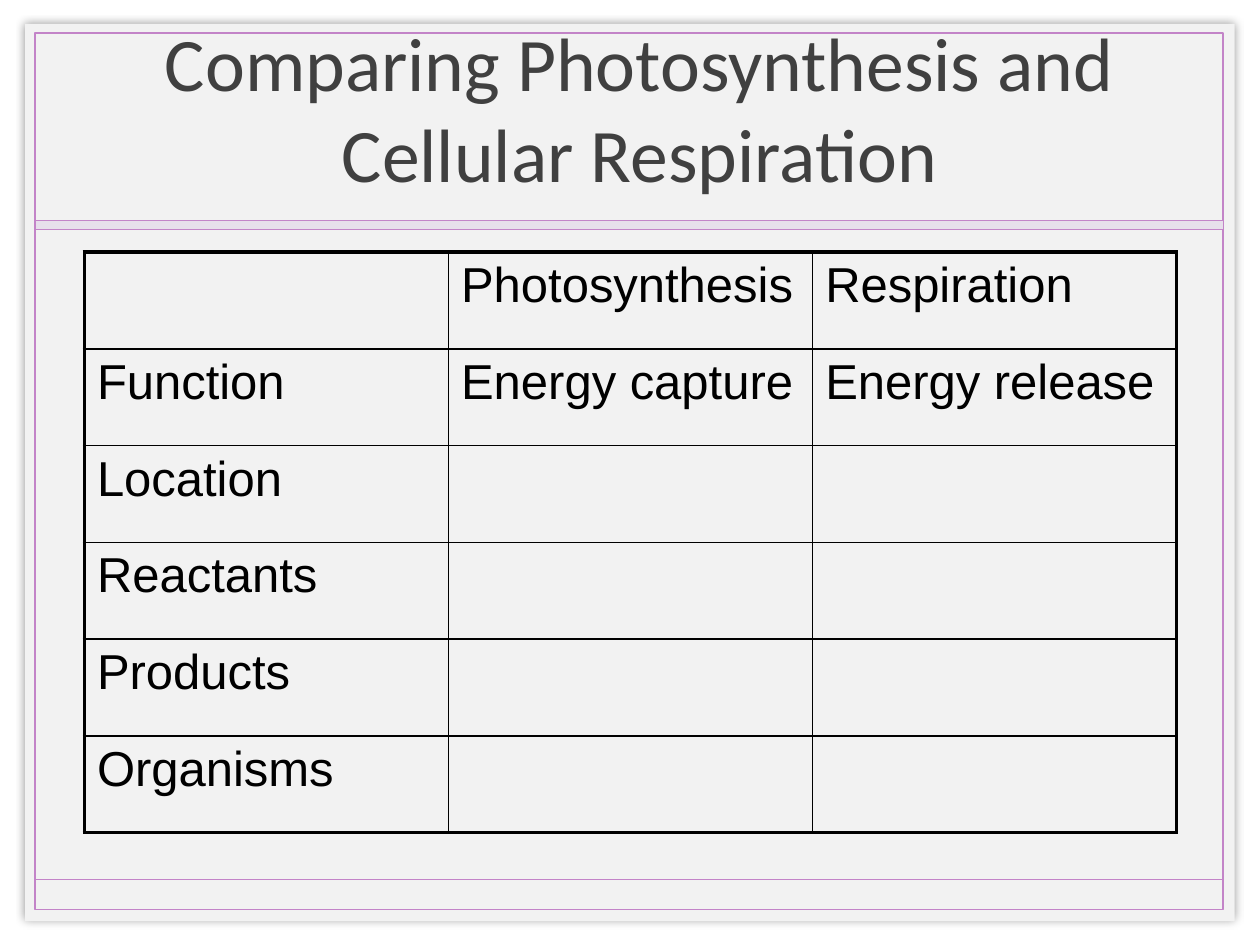
from dataclasses import dataclass
from typing import Any, Optional

import pptx
import pptx.dml.color
import pptx.enum.shapes
import pptx.enum.text
import pptx.oxml
import pptx.oxml.ns
import pptx.util
from lxml import etree

Inches = pptx.util.Inches
Pt = pptx.util.Pt
PINK = "C384C8"
BLACK = "000000"


@dataclass
class Panel:
    left: float
    top: float
    width: float
    height: float
    fill: Optional[str] = None
    line: Optional[str] = None
    weight: float = 1
    glow: bool = False


PANELS = [
    Panel(0.2, 0.19, 9.6, 7.12, fill="F2F2F2", glow=True),
    Panel(0.28, 0.26, 9.43, 6.96, line=PINK),
    Panel(0.28, 1.75, 9.43, 0.07, fill="E7DFEB", line=PINK, weight=0.25),
]
ROWS = [
    ("", "Photosynthesis", "Respiration"),
    ("Function", "Energy capture", "Energy release"),
    ("Location", "", ""),
    ("Reactants", "", ""),
    ("Products", "", ""),
    ("Organisms", "", ""),
]


def color(code: str) -> pptx.dml.color.RGBColor:
    return pptx.dml.color.RGBColor.from_string(code)


def add(parent: Any, tag: str, **attrs: str) -> Any:
    return etree.SubElement(parent, pptx.oxml.ns.qn(tag), attrs)


def draw_panel(slide: Any, panel: Panel) -> None:
    shape = slide.shapes.add_shape(
        pptx.enum.shapes.MSO_SHAPE.RECTANGLE,
        Inches(panel.left), Inches(panel.top),
        Inches(panel.width), Inches(panel.height))
    shape.shadow.inherit = False
    if panel.fill:
        shape.fill.solid()
        shape.fill.fore_color.rgb = color(panel.fill)
    else:
        shape.fill.background()
    if panel.line:
        shape.line.color.rgb = color(panel.line)
        shape.line.width = Pt(panel.weight)
    else:
        shape.line.fill.background()
    if panel.glow:
        effects = shape._element.spPr.find(pptx.oxml.ns.qn("a:effectLst"))
        shade = add(effects, "a:outerShdw", blurRad=str(Pt(5)), dist="0",
                    dir="0", algn="ctr", rotWithShape="0")
        add(add(shade, "a:srgbClr", val=BLACK), "a:alpha", val="40000")


def draw_rule(slide: Any, left: float, right: float, y: float) -> None:
    rule = slide.shapes.add_connector(
        pptx.enum.shapes.MSO_CONNECTOR.STRAIGHT,
        Inches(left), Inches(y), Inches(right), Inches(y))
    rule.line.color.rgb = color(PINK)
    rule.line.width = Pt(1)
    add(rule._element.spPr, "a:effectLst")


def set_edge(cell: Any, side: str, outer: bool) -> None:
    weight = Pt(2.25 if outer else 1)
    edge = add(cell._tc.get_or_add_tcPr(), f"a:ln{side}", w=str(weight))
    add(add(edge, "a:solidFill"), "a:srgbClr", val=BLACK)


def draw_table(slide: Any, rows: list[tuple[str, ...]]) -> None:
    high, wide = len(rows), len(rows[0])
    table = slide.shapes.add_table(
        high, wide, Inches(0.67), Inches(2),
        Inches(8.67), Inches(4.61)).table
    table.first_row = False
    table.horz_banding = False
    for r, row in enumerate(rows):
        for c, text in enumerate(row):
            cell = table.cell(r, c)
            cell.text = text
            font = cell.text_frame.paragraphs[0].font
            font.name = "Arial"
            font.size = Pt(28)
            font.color.rgb = color(BLACK)
            set_edge(cell, "L", c == 0)
            set_edge(cell, "R", c == wide - 1)
            set_edge(cell, "T", r == 0)
            set_edge(cell, "B", r == high - 1)
            cell.fill.background()


def draw_title(slide: Any, text: str) -> None:
    box = slide.shapes.add_textbox(
        Inches(0.35), Inches(0.06), Inches(9.45), Inches(1.57))
    frame = box.text_frame
    frame.word_wrap = True
    frame.vertical_anchor = pptx.enum.text.MSO_ANCHOR.MIDDLE
    para = frame.paragraphs[0]
    para.text = text
    para.alignment = pptx.enum.text.PP_ALIGN.CENTER
    para.font.name = "Calibri"
    para.font.size = Pt(43.2)
    para.font.color.rgb = color("404040")


def main() -> None:
    deck = pptx.Presentation()
    deck.slide_width = Inches(10)
    deck.slide_height = Inches(7.5)
    slide = deck.slides.add_slide(deck.slide_layouts[6])
    frame, border, band = PANELS
    draw_panel(slide, frame)
    draw_panel(slide, border)
    draw_rule(slide, 0.28, 9.71, 6.98)
    draw_panel(slide, band)
    draw_table(slide, ROWS)
    draw_title(slide, "Comparing Photosynthesis and Cellular Respiration")
    deck.save("out.pptx")


if __name__ == "__main__":
    main()
